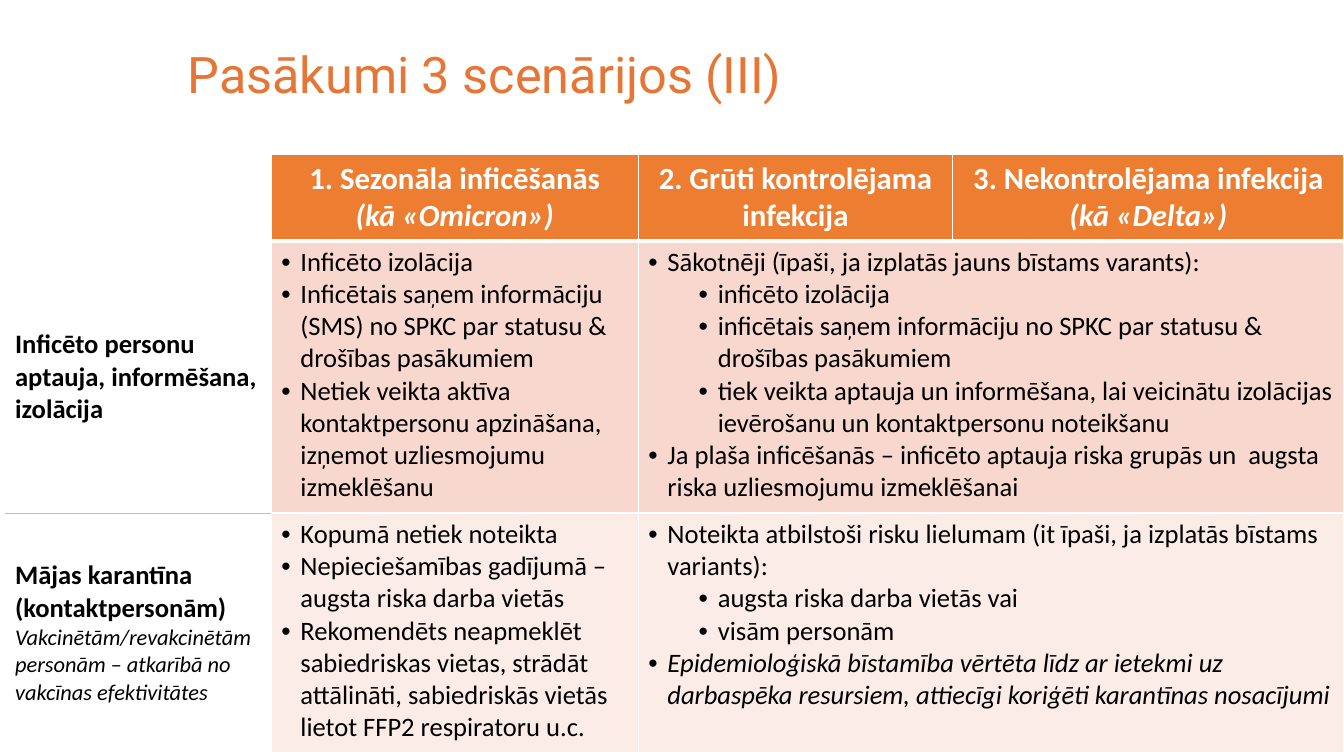
from lxml.etree import SubElement
from pptx import Presentation
from pptx.dml.color import RGBColor
from pptx.enum.text import MSO_ANCHOR, PP_ALIGN
from pptx.oxml.ns import qn
from pptx.util import Inches, Pt

TITLE_ORANGE = RGBColor(0xE6, 0x76, 0x36)
HEADER_ORANGE = RGBColor(0xED, 0x7D, 0x31)
BAND_FILLS = [RGBColor(0xF8, 0xD7, 0xCE), RGBColor(0xFC, 0xEC, 0xE8)]
WHITE = RGBColor(0xFF, 0xFF, 0xFF)
BLACK = RGBColor(0, 0, 0)
GREY = RGBColor(0xBF, 0xBF, 0xBF)

COLUMNS = [2.64, 3.64, 3.12, 3.88]
ROWS = [0.86, 2.7, 2.38]
TABLE_LEFT, TABLE_TOP = 0.05, 1.53
NO_STYLE = "{2D5ABB26-0587-4C30-8999-92F81FD0307C}"
BODY_SIZE = 19

# Header: main line and optional italic line
HEADERS = [
    ("1. Sezonāla inficēšanās", "(kā «Omicron»)"),
    ("2. Grūti kontrolējama infekcija", None),
    ("3. Nekontrolējama infekcija", "(kā «Delta»)"),
]

# Each measure: row label, label note, bullets of scenario 1, bullets of scenarios 2 and 3.
# Each bullet: level, text, italic
MEASURES = [
    (
        "Inficēto personu aptauja, informēšana, izolācija",
        None,
        [
            (0, "Inficēto izolācija", False),
            (0, "Inficētais saņem informāciju (SMS) no SPKC par statusu & drošības pasākumiem", False),
            (0, "Netiek veikta aktīva kontaktpersonu apzināšana, izņemot uzliesmojumu izmeklēšanu", False),
        ],
        [
            (0, "Sākotnēji (īpaši, ja izplatās jauns bīstams varants):", False),
            (1, "inficēto izolācija", False),
            (1, "inficētais saņem informāciju no SPKC par statusu & drošības pasākumiem", False),
            (1, "tiek veikta aptauja un informēšana, lai veicinātu izolācijas ievērošanu "
                "un kontaktpersonu noteikšanu", False),
            (0, "Ja plaša inficēšanās – inficēto aptauja riska grupās un  augsta riska "
                "uzliesmojumu izmeklēšanai", False),
        ],
    ),
    (
        "Mājas karantīna (kontaktpersonām)",
        "Vakcinētām/revakcinētām personām – atkarībā no vakcīnas efektivitātes",
        [
            (0, "Kopumā netiek noteikta", False),
            (0, "Nepieciešamības gadījumā – augsta riska darba vietās", False),
            (0, "Rekomendēts neapmeklēt sabiedriskas vietas, strādāt attālināti, "
                "sabiedriskās vietās lietot FFP2 respiratoru u.c.", False),
        ],
        [
            (0, "Noteikta atbilstoši risku lielumam (it īpaši, ja izplatās bīstams variants):", False),
            (1, "augsta riska darba vietās vai", False),
            (1, "visām personām", False),
            (0, "Epidemioloģiskā bīstamība vērtēta līdz ar ietekmi uz darbaspēka resursiem, "
                "attiecīgi koriģēti karantīnas nosacījumi", True),
        ],
    ),
]


def add_run(p, text, size, color=BLACK, bold=False, italic=False, font="Calibri"):
    r = p.add_run()
    r.text = text
    r.font.name = font
    r.font.size = Pt(size)
    r.font.bold = bold
    r.font.italic = italic
    r.font.color.rgb = color


def next_paragraph(tf, index):
    """Return the paragraph the frame starts with, then new ones."""
    return tf.paragraphs[0] if index == 0 else tf.add_paragraph()


def set_borders(cell, **sides):
    """Draw the sides given as L, R, T or B = (colour, points)."""
    tcPr = cell._tc.get_or_add_tcPr()
    for side in "LRTB":
        if side in sides:
            color, width = sides[side]
            ln = SubElement(tcPr, qn(f"a:ln{side}"), w=str(Pt(width)))
            fill = SubElement(ln, qn("a:solidFill"))
            SubElement(fill, qn("a:srgbClr"), val=str(color))


def fill_cell(cell, color, bottom=1):
    """Give a cell white borders and a solid fill."""
    thin = (WHITE, 1)
    set_borders(cell, L=thin, R=thin, T=thin, B=(WHITE, bottom))
    cell.fill.solid()
    cell.fill.fore_color.rgb = color


def write_header(cell, heading, example):
    fill_cell(cell, HEADER_ORANGE, bottom=3)
    cell.vertical_anchor = MSO_ANCHOR.MIDDLE
    p = cell.text_frame.paragraphs[0]
    p.alignment = PP_ALIGN.CENTER
    add_run(p, heading, 22, WHITE, bold=True)
    if example:
        p.add_line_break()
        add_run(p, example, 22, WHITE, bold=True, italic=True)


def write_label(cell, label, note):
    cell.vertical_anchor = MSO_ANCHOR.MIDDLE
    tf = cell.text_frame
    add_run(tf.paragraphs[0], label, BODY_SIZE, bold=True)
    if note:
        add_run(tf.add_paragraph(), note, 16, italic=True)


def write_bullets(cell, bullets):
    for i, (level, text, italic) in enumerate(bullets):
        p = next_paragraph(cell.text_frame, i)
        p.level = level
        pPr = p._p.get_or_add_pPr()
        pPr.set("marL", str(Inches(0.19 + 0.5 * level)))
        pPr.set("indent", str(Inches(-0.19)))
        SubElement(pPr, qn("a:buFont"), typeface="Arial")
        SubElement(pPr, qn("a:buChar"), char="•")
        add_run(p, text, BODY_SIZE, italic=italic)


def add_title(s, text):
    title = s.shapes.title
    title.left, title.top = Inches(1.76), Inches(0.04)
    title.width, title.height = Inches(10.69), Inches(1.45)
    tf = title.text_frame
    tf.vertical_anchor = MSO_ANCHOR.MIDDLE
    p = tf.paragraphs[0]
    p.alignment = PP_ALIGN.LEFT
    p.line_spacing = 0.9
    add_run(p, text, 36, TITLE_ORANGE, font="Roboto")


def add_scenario_table(s):
    frame = s.shapes.add_table(
        len(ROWS), len(COLUMNS), Inches(TABLE_LEFT), Inches(TABLE_TOP),
        Inches(sum(COLUMNS)), Inches(sum(ROWS)))
    table = frame.table
    table.first_row = table.horz_banding = False
    table._tbl.tblPr.find(qn("a:tableStyleId")).text = NO_STYLE
    for column, width in zip(table.columns, COLUMNS):
        column.width = Inches(width)
    for row, height in zip(table.rows, ROWS):
        row.height = Inches(height)

    for c, (heading, example) in enumerate(HEADERS, start=1):
        write_header(table.cell(0, c), heading, example)
    for r, (label, note, seasonal, severe) in enumerate(MEASURES, start=1):
        write_label(table.cell(r, 0), label, note)
        table.cell(r, 2).merge(table.cell(r, 3))
        for c in range(1, len(COLUMNS)):
            fill_cell(table.cell(r, c), BAND_FILLS[r - 1])
        write_bullets(table.cell(r, 1), seasonal)
        write_bullets(table.cell(r, 2), severe)
    set_borders(table.cell(1, 0), B=(GREY, 0.25))
    set_borders(table.cell(2, 0), T=(GREY, 0.25))


def main():
    prs = Presentation()
    prs.slide_width, prs.slide_height = Inches(13.33), Inches(7.5)
    s = prs.slides.add_slide(prs.slide_layouts[5])
    add_title(s, "Pasākumi 3 scenārijos (III)")
    add_scenario_table(s)
    prs.save("out.pptx")


if __name__ == "__main__":
    main()
